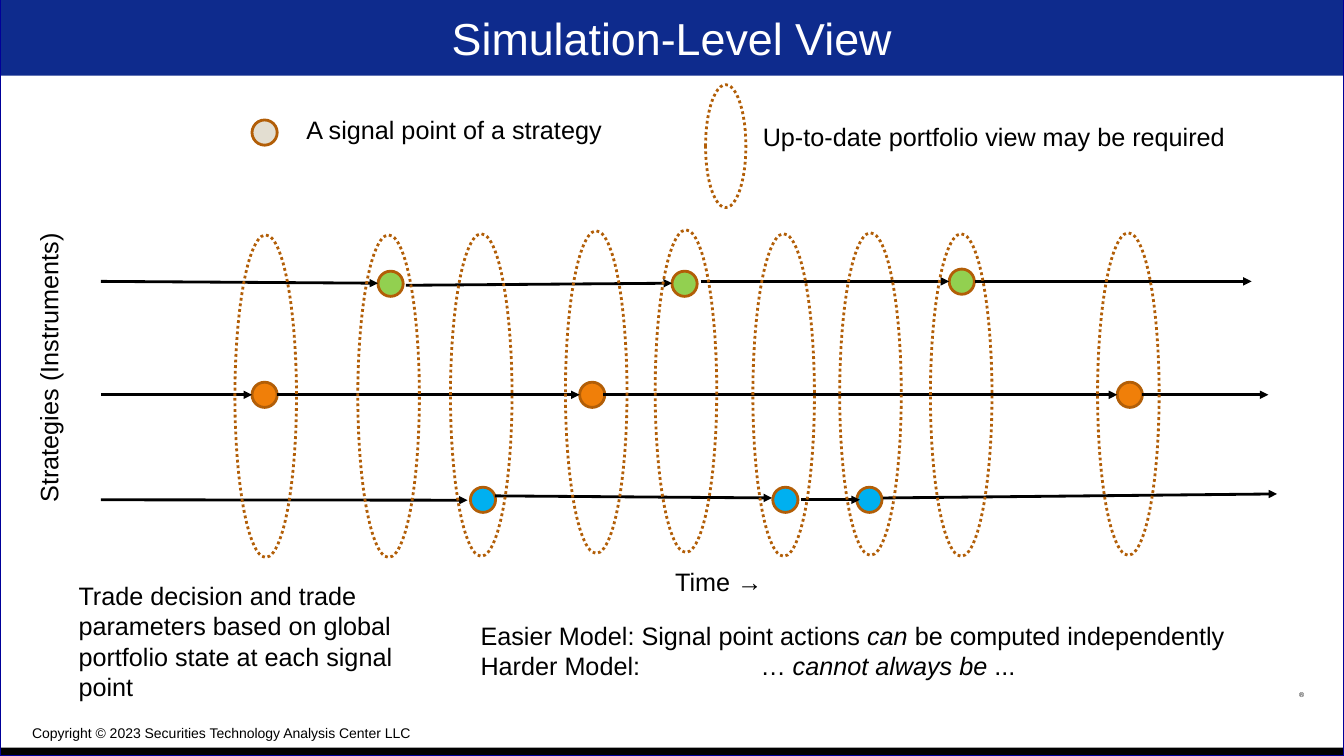
"""Build the simulation-level view slide."""
import dataclasses

import lxml.etree
import pptx
import pptx.dml.color
import pptx.enum.dml
import pptx.enum.shapes
import pptx.enum.text
import pptx.oxml.ns
import pptx.util

Pt = pptx.util.Pt
Shape = pptx.enum.shapes.MSO_SHAPE
qn = pptx.oxml.ns.qn


@dataclasses.dataclass(frozen=True)
class Theme:
    """Colours and type sizes of the slide."""
    font: str = "Arial"
    band: str = "0E2B8D"
    frame: str = "000099"
    ink: str = "000000"
    paper: str = "FFFFFF"
    rim: str = "B25E07"
    green: str = "92D050"
    orange: str = "F07F09"
    blue: str = "00B0F0"
    sand: str = "E3DED1"
    title: int = 32
    body: int = 18
    small: int = 10
    tiny: int = 5


THEME = Theme()
DOT = 18
VIEW = (44, 230.4)

TRACKS = [
    (THEME.green,
     [(270, 193.7), (480, 193.7), (678, 192.2)],
     [(72, 201, 270, 202.3), (290, 203.8, 480, 202.3),
      (500.4, 201, 678, 201), (696.2, 201, 894, 201)]),
    (THEME.orange,
     [(180, 273), (414, 273), (798, 273)],
     [(72, 282, 180, 282), (198, 282, 414, 282),
      (430.6, 282, 798, 282), (816, 282, 906, 282)]),
    (THEME.blue,
     [(336, 348), (552, 348), (612, 348)],
     [(72, 357, 334, 357.3), (353.5, 354.2, 551.5, 355.7),
      (572.4, 357, 614.2, 357), (630.7, 355.7, 912.2, 352.8)]),
]

VIEWS = [(167.8, 167.8), (255.6, 167.8), (321.8, 167), (403.9, 164.9),
         (468, 164.2), (537.8, 167), (599.8, 166.3), (664.6, 167),
         (784, 166.3)]

LABELS = [
    ((475.2, 401, 378, 28.8), "Time →"),
    ((49, 411.1, 262, 94.3), "Trade decision and trade parameters based on "
                             "global portfolio state at each signal point"),
    ((211.7, 77.8, 378, 28.8), "A signal point of a strategy"),
    ((537.8, 82.8, 378, 28.8), "Up-to-date portfolio view may be required"),
]

MODELS = [
    [("Easier Model: Signal point actions ", False), ("can", True),
     (" be computed independently", False)],
    [("Harder Model:\t… ", False), ("cannot always be ", True),
     ("...", False)],
]


def rgb(code):
    """Turn a hex code into a colour."""
    return pptx.dml.color.RGBColor.from_string(code)


def apply(obj, vals):
    """Set each format value on an object."""
    for key, val in vals.items():
        setattr(obj, key, val)


def ink(font, size, color=THEME.ink):
    """Set the type of a font."""
    apply(font, {"name": THEME.font, "size": Pt(size)})
    font.color.rgb = rgb(color)


def shape(slide, kind, box, fill=None, line=None, width=2, dash=None):
    """Add a preset shape with plain fill and line."""
    item = slide.shapes.add_shape(kind, *map(Pt, box))
    item.shadow.inherit = False
    if fill:
        item.fill.solid()
        item.fill.fore_color.rgb = rgb(fill)
    else:
        item.fill.background()
    if line:
        item.line.color.rgb = rgb(line)
        apply(item.line, {"width": Pt(width), "dash_style": dash})
    else:
        item.line.fill.background()


def dot(slide, left, top, fill):
    """Add a signal point."""
    shape(slide, Shape.OVAL, (left, top, DOT, DOT), fill, THEME.rim)


def ring(slide, box):
    """Add a dotted portfolio view."""
    shape(slide, Shape.OVAL, box, line=THEME.rim,
          dash=pptx.enum.dml.MSO_LINE.ROUND_DOT)


def arrow(slide, ends):
    """Add a straight arrow."""
    kind = pptx.enum.shapes.MSO_CONNECTOR.STRAIGHT
    item = slide.shapes.add_connector(kind, *map(Pt, ends))
    item.line.color.rgb = rgb(THEME.ink)
    item.line.width = Pt(2)
    edge = item.line._get_or_add_ln()
    lxml.etree.SubElement(edge, qn("a:tailEnd"), type="triangle")
    lxml.etree.SubElement(item._element.spPr, qn("a:effectLst"))


def label(slide, box, text, size=THEME.body, wrap=True, turn=0):
    """Add a text box with one paragraph."""
    item = slide.shapes.add_textbox(*map(Pt, box))
    item.rotation = turn
    frame = item.text_frame
    frame.word_wrap = wrap
    frame.text = text
    ink(frame.paragraphs[0].runs[0].font, size)


def models(slide):
    """Add the two model lines with a shared tab stop."""
    item = slide.shapes.add_textbox(*map(Pt, (336.2, 439.2, 614.2, 51.1)))
    frame = item.text_frame
    frame.word_wrap = True
    for num, parts in enumerate(MODELS):
        para = frame.add_paragraph() if num else frame.paragraphs[0]
        tabs = lxml.etree.SubElement(
            para._p.get_or_add_pPr(), qn("a:tabLst"))
        lxml.etree.SubElement(
            tabs, qn("a:tab"), pos=str(Pt(200)), algn="l")
        for text, slant in parts:
            run = para.add_run()
            run.text = text
            ink(run.font, THEME.body)
            run.font.italic = slant


def title(slide, text):
    """Place the title on the band."""
    item = slide.shapes.title
    apply(item, {"left": Pt(8), "top": Pt(0),
                 "width": Pt(944), "height": Pt(54)})
    frame = item.text_frame
    frame.text = text
    frame.vertical_anchor = pptx.enum.text.MSO_ANCHOR.MIDDLE
    para = frame.paragraphs[0]
    para.alignment = pptx.enum.text.PP_ALIGN.CENTER
    ink(para.runs[0].font, THEME.title, THEME.paper)
    slide.shapes._spTree.append(item._element)


def main():
    """Draw and save the slide."""
    deck = pptx.Presentation()
    apply(deck, {"slide_width": Pt(960), "slide_height": Pt(540)})
    slide = deck.slides.add_slide(deck.slide_layouts[5])
    shape(slide, Shape.RECTANGLE, (0, 0, 960, 54), THEME.band)
    shape(slide, Shape.RECTANGLE, (0, 534, 960, 6), THEME.ink)
    label(slide, (15.8, 514.1, 288.7, 19.4),
          "Copyright © 2023 Securities Technology Analysis Center LLC",
          THEME.small, False)
    shape(slide, Shape.RECTANGLE, (0, 0, 960, 540),
          line=THEME.frame, width=0.75)
    label(slide, (920.9, 489.6, 18, 13.7), "®", THEME.tiny)
    title(slide, "Simulation-Level View")
    for fill, dots, ends in TRACKS:
        for left, top in dots:
            dot(slide, left, top, fill)
        for line in ends:
            arrow(slide, line)
    for spot in VIEWS:
        ring(slide, spot + VIEW)
    dot(slide, 180, 85.7, THEME.sand)
    ring(slide, (504, 60.5, 28.8, 87.8))
    for box, text in LABELS:
        label(slide, box, text)
    label(slide, (-80.6, 236.2, 230.4, 28.8), "Strategies (Instruments)",
          turn=270)
    models(slide)
    deck.save("out.pptx")


if __name__ == "__main__":
    main()
